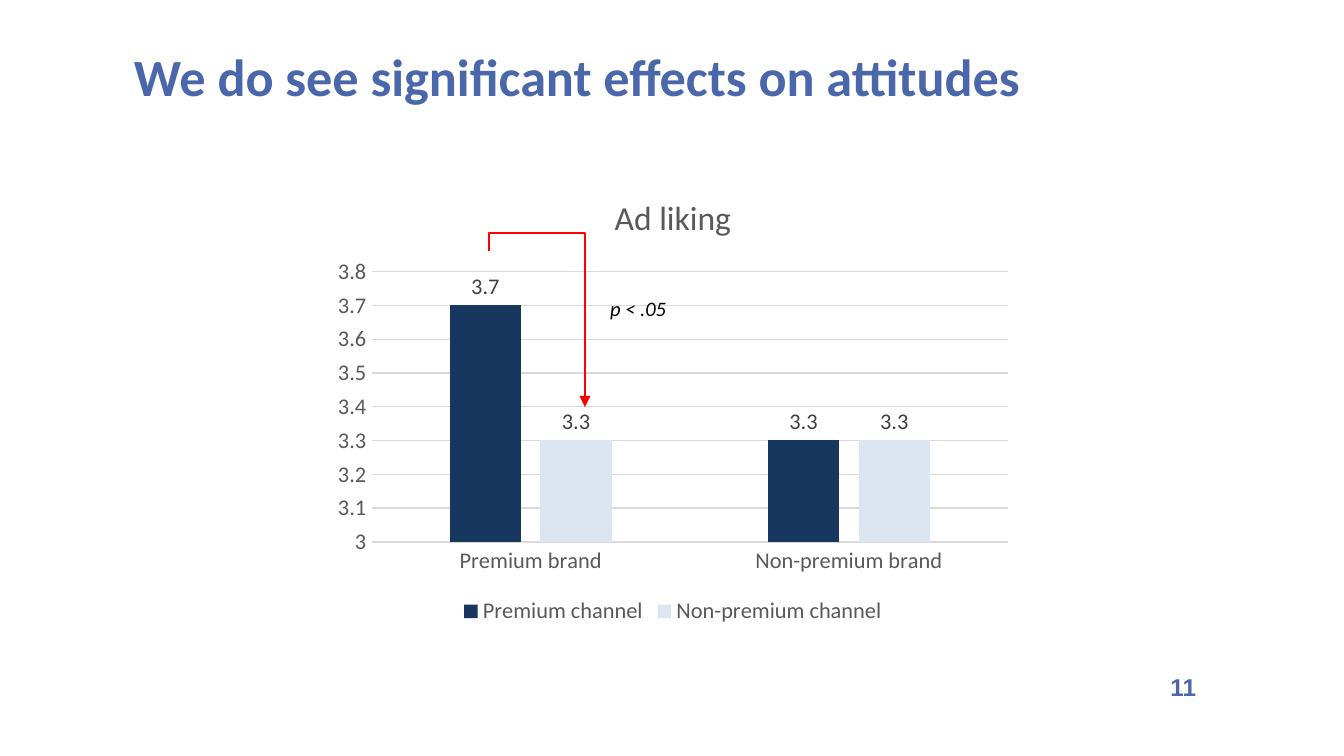
import pptx
import pptx.chart.data
import pptx.dml.color
import pptx.enum.chart
import pptx.enum.shapes
import pptx.enum.text
import pptx.oxml
import pptx.oxml.ns
import pptx.util

SLIDE_SIZE = (1344, 756)
EMU_PER_PX = 914400 / 134.4
COLORS = {
    "accent": "4967AA", "black": "000000", "label": "404040", "axis": "595959",
    "grid": "D9D9D9", "arrow": "FF0000", "navy": "17375E", "pale": "DCE6F2",
}

# text, box in px, insets in px (x, y), alignment, space before, font
TEXTS = [
    ("11", (653, 665, 556, 43), (13, 7), "RIGHT", 0,
     {"name": "Arial", "size": 13, "bold": True, "color": "accent"}),
    ("We do see significant effects on attitudes", (134, 44, 1074, 95), (0, 0), "LEFT", 2,
     {"name": "Calibri", "size": 28, "bold": True, "color": "accent"}),
]
P_VALUE = ("p < .05", (597, 289, 144, 39), (13, 7), "LEFT", 0,
           {"name": "Calibri", "size": 11, "italic": True, "color": "black"})

CHART_BOX = (324, 172, 698, 458)
CHART_TITLE = "Ad liking"
BRANDS = ["Premium brand", "Non-premium brand"]
CHANNELS = [
    ("Premium channel", (3.7, 3.3), "navy"),
    ("Non-premium channel", (3.3, 3.3), "pale"),
]
VALUE_SCALE = {"minimum_scale": 3, "maximum_scale": 3.8, "major_unit": 0.1,
               "has_major_gridlines": True}

ARROW_START, ARROW_END, ARROW_TOP = (489, 251), (585, 407), 233


def px(*lengths):
    return [pptx.util.Emu(round(length * EMU_PER_PX)) for length in lengths]


def rgb(name):
    return pptx.dml.color.RGBColor.from_string(COLORS[name])


def style_font(font, style):
    for key, value in style.items():
        if key == "color":
            font.color.rgb = rgb(value)
        else:
            setattr(font, key, pptx.util.Pt(value) if key == "size" else value)


def style_line(line, color):
    line.color.rgb = rgb(color)
    line.width = pptx.util.Pt(0.75)


def add_text(slide, text, box, insets, alignment, space_before, style):
    frame = slide.shapes.add_textbox(*px(*box)).text_frame
    frame.word_wrap = True
    frame.margin_left, frame.margin_top = px(*insets)
    frame.margin_right, frame.margin_bottom = px(*insets)
    paragraph = frame.paragraphs[0]
    paragraph.alignment = getattr(pptx.enum.text.PP_ALIGN, alignment)
    paragraph.space_before = pptx.util.Pt(space_before)
    run = paragraph.add_run()
    run.text = text
    style_font(run.font, style)


def add_liking_chart(slide):
    data = pptx.chart.data.CategoryChartData()
    data.categories = BRANDS
    for name, values, _ in CHANNELS:
        data.add_series(name, values)
    chart = slide.shapes.add_chart(
        pptx.enum.chart.XL_CHART_TYPE.COLUMN_CLUSTERED, *px(*CHART_BOX), data).chart
    text_style = {"name": "Calibri", "size": 12, "bold": False, "color": "axis"}
    style_font(chart.font, text_style)

    chart.has_title = True
    title = chart.chart_title.text_frame
    title.text = CHART_TITLE
    style_font(title.paragraphs[0].runs[0].font, {**text_style, "size": 18})
    chart.chart_title.include_in_layout = False

    chart.has_legend = True
    chart.legend.position = pptx.enum.chart.XL_LEGEND_POSITION.BOTTOM
    chart.legend.include_in_layout = False
    style_font(chart.legend.font, text_style)

    for axis in (chart.category_axis, chart.value_axis):
        axis.major_tick_mark = pptx.enum.chart.XL_TICK_MARK.NONE
        style_font(axis.tick_labels.font, text_style)
    style_line(chart.category_axis.format.line, "grid")
    for key, value in VALUE_SCALE.items():
        setattr(chart.value_axis, key, value)
    chart.value_axis.format.line.fill.background()
    style_line(chart.value_axis.major_gridlines.format.line, "grid")

    plot = chart.plots[0]
    plot.gap_width, plot.overlap, plot.vary_by_categories = 219, -27, False
    for series, (_, _, color) in zip(plot.series, CHANNELS):
        series.format.fill.solid()
        series.format.fill.fore_color.rgb = rgb(color)
        series.invert_if_negative = False
        labels = series.data_labels
        labels.show_value = True
        labels.position = pptx.enum.chart.XL_LABEL_POSITION.OUTSIDE_END
        style_font(labels.font, {**text_style, "color": "label"})


def add_bracket_arrow(slide):
    """Elbow turned by 270 degrees, so that it rises, crosses and drops."""
    (x1, y1), (x2, y2) = ARROW_START, ARROW_END
    center_x, center_y = (x1 + x2) / 2, (y1 + y2) / 2
    half_length, half_span = (y2 - y1) / 2, (x2 - x1) / 2
    arrow = slide.shapes.add_connector(
        pptx.enum.shapes.MSO_CONNECTOR.ELBOW,
        *px(center_x + half_length, center_y - half_span,
            center_x - half_length, center_y + half_span))
    style_line(arrow.line, "arrow")
    properties = arrow.element.spPr
    properties.find(pptx.oxml.ns.qn("a:xfrm")).set("rot", str(270 * 60000))
    bend = round((ARROW_TOP - y1) / (y2 - y1) * 100000)
    namespace = pptx.oxml.ns.nsdecls("a")
    guides = properties.find(".//" + pptx.oxml.ns.qn("a:avLst"))
    guides.append(pptx.oxml.parse_xml(f'<a:gd {namespace} name="adj1" fmla="val {bend}"/>'))
    properties.find(pptx.oxml.ns.qn("a:ln")).append(
        pptx.oxml.parse_xml(f'<a:tailEnd {namespace} type="triangle"/>'))
    properties.append(pptx.oxml.parse_xml(f"<a:effectLst {namespace}/>"))


def main():
    deck = pptx.Presentation()
    deck.slide_width, deck.slide_height = px(*SLIDE_SIZE)
    slide = deck.slides.add_slide(deck.slide_layouts[6])
    for text in TEXTS:
        add_text(slide, *text)
    add_liking_chart(slide)
    add_text(slide, *P_VALUE)
    add_bracket_arrow(slide)
    deck.save("out.pptx")


if __name__ == "__main__":
    main()
